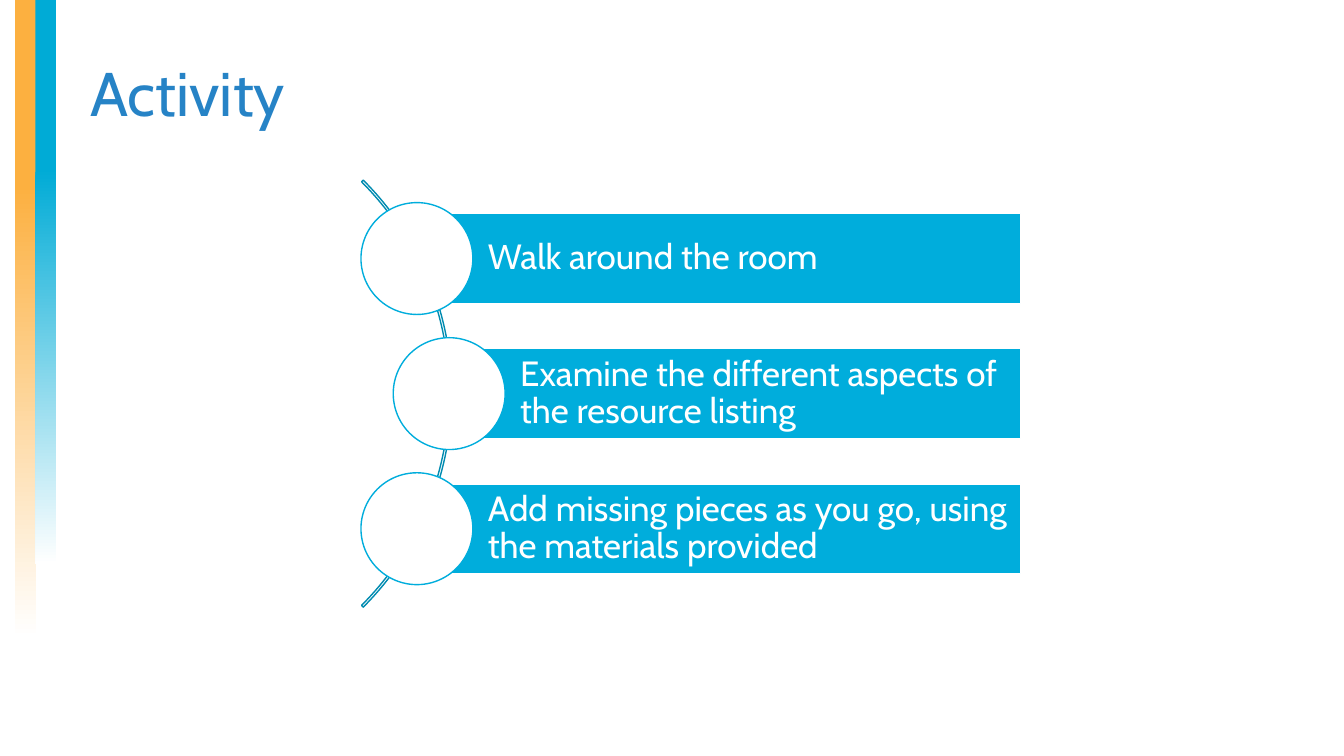
from dataclasses import dataclass

from pptx import Presentation
from pptx import util as u
from pptx.dml import color
from pptx.enum import shapes, text

PX = 9144
COLORS = {
    "orange": "FCB040",
    "stripe": "00ABD6",
    "title": "2683C6",
    "bar": "00ADDC",
    "arc": "008BB0",
    "white": "FFFFFF",
}
FONT = "Cabin"
BAR_RIGHT, BAR_HEIGHT = 1012, 89
CIRCLE = 111
FIRST_CENTER, STEP_PITCH = 256, 134


@dataclass
class Stripe:
    left: int
    height: int
    color: str
    solid_until: float


@dataclass
class Step:
    left: int
    label: str


STRIPES = [Stripe(15, 633, "orange", 0.29), Stripe(35, 560, "stripe", 0.3)]
STEPS = [
    Step(413, "Walk around the room"),
    Step(445, "Examine the different aspects of the resource listing"),
    Step(413, "Add missing pieces as you go, using the materials provided"),
]


def rgb(name: str) -> color.RGBColor:
    return color.RGBColor.from_string(COLORS[name])


def add_shape(s, kind, left: int, top: int, width: int, height: int,
              fill: str | None = None, line: str | None = None):
    sp = s.shapes.add_shape(kind, left * PX, top * PX, width * PX, height * PX)
    sp.shadow.inherit = False
    if fill:
        sp.fill.solid()
        sp.fill.fore_color.rgb = rgb(fill)
    else:
        sp.fill.background()
    if line:
        sp.line.color.rgb = rgb(line)
        sp.line.width = u.Pt(1)
    else:
        sp.line.fill.background()
    return sp


def set_text(tf, label: str, size: int, font_color: str) -> None:
    tf.text = label
    tf.word_wrap = True
    tf.vertical_anchor = text.MSO_ANCHOR.MIDDLE
    p = tf.paragraphs[0]
    p.alignment = text.PP_ALIGN.LEFT
    p.line_spacing = 0.9
    r = p.runs[0]
    r.font.name = FONT
    r.font.size = u.Pt(size)
    r.font.color.rgb = rgb(font_color)


def add_stripe(s, stripe: Stripe) -> None:
    sp = add_shape(s, shapes.MSO_SHAPE.RECTANGLE, stripe.left, 0, 21, stripe.height)
    sp.fill.gradient()
    sp.fill.gradient_angle = 270
    start, end = sp.fill.gradient_stops
    start.position, start.color.rgb = stripe.solid_until, rgb(stripe.color)
    end.position, end.color.rgb = 1, rgb("white")


def add_step(s, step: Step, center: int) -> None:
    bar = add_shape(s, shapes.MSO_SHAPE.RECTANGLE, step.left, center - BAR_HEIGHT // 2,
                    BAR_RIGHT - step.left, BAR_HEIGHT, "bar", "white")
    tf = bar.text_frame
    tf.margin_left = 71 * PX
    tf.margin_top = tf.margin_right = tf.margin_bottom = 7 * PX
    set_text(tf, step.label, 25, "white")
    add_shape(s, shapes.MSO_SHAPE.OVAL, step.left - CIRCLE // 2, center - CIRCLE // 2,
              CIRCLE, CIRCLE, "white", "bar")


def main() -> None:
    prs = Presentation()
    prs.slide_width, prs.slide_height = 1333 * PX, 750 * PX
    s = prs.slides.add_slide(prs.slide_layouts[6])
    for stripe in STRIPES:
        add_stripe(s, stripe)

    title = s.shapes.add_textbox(80 * PX, 23 * PX, 1221 * PX, 145 * PX)
    set_text(title.text_frame, "Activity", 44, "title")

    arc = add_shape(s, shapes.MSO_SHAPE.BLOCK_ARC, -151, 91, 599, 599, line="arc")
    for i, value in enumerate((189, 27, 0.004)):
        arc.adjustments[i] = value

    for i, step in enumerate(STEPS):
        add_step(s, step, FIRST_CENTER + i * STEP_PITCH)
    prs.save("out.pptx")


if __name__ == "__main__":
    main()
